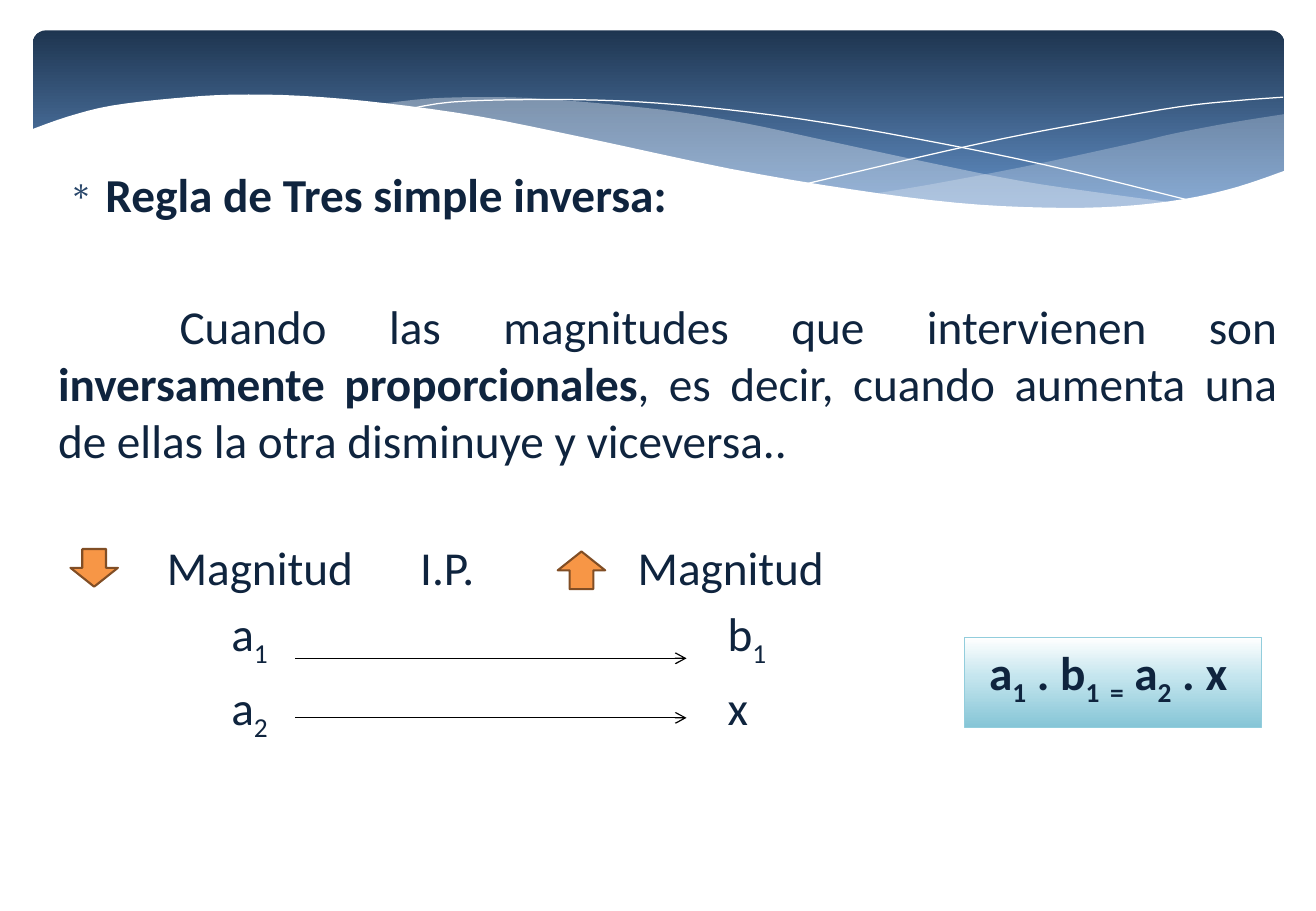
"""Slide on the inverse rule of three, under a wave header."""
from copy import deepcopy
from lxml import etree
from pptx import Presentation
from pptx.dml.color import RGBColor
from pptx.enum.shapes import MSO_CONNECTOR, MSO_SHAPE
from pptx.enum.text import MSO_ANCHOR, PP_ALIGN
from pptx.oxml.ns import qn
from pptx.util import Inches, Pt

RECT, ROUND, DOWN = MSO_SHAPE.RECTANGLE, MSO_SHAPE.ROUNDED_RECTANGLE, MSO_SHAPE.DOWN_ARROW
STRAIGHT = MSO_CONNECTOR.STRAIGHT
LEFT, JUSTIFY, TOP = PP_ALIGN.LEFT, PP_ALIGN.JUSTIFY, MSO_ANCHOR.TOP
THEME = dict(
    font="Calibri", size=Pt(28), text="0F243E", bullet="28466A", white="FFFFFF", mist="E7EDF5",
    arrow="F79646", arrow_edge="814E25", line="000000", formula_edge="92CDDC",
    header=[(0, "1E3550"), (0.9, "608DC3")],
    formula=[(0, "FFFFFF"), (0.44, "C4E5EE"), (1, "85C5D6")])
CELL = Inches(0.1)


def cells(*values):
    """Turn grid cells into slide lengths."""
    return [round(v * CELL) for v in values]


def rgb(name):
    """Look up a theme colour."""
    return RGBColor.from_string(THEME[name])


prs = Presentation()
prs.slide_width, prs.slide_height = cells(108.3, 75)
slide = prs.slides.add_slide(prs.slide_layouts[6])
shapes = slide.shapes

panels = {}
for name, kind, box in [("header", ROUND, (2.7, 2.5, 103, 15.6)),
                        ("formula", RECT, (79.4, 52.5, 24.4, 7.4))]:
    s = panels[name] = shapes.add_shape(kind, *cells(*box))
    s.shadow.inherit = False
    s.fill.gradient()
    s.fill.gradient_angle = 270
    stop_list = s._element.spPr.find(".//" + qn("a:gsLst"))
    for _ in THEME[name][2:]:
        stop_list.append(deepcopy(stop_list[0]))
    for stop, (position, color) in zip(s.fill.gradient_stops, THEME[name]):
        stop.position, stop.color.rgb = position, RGBColor.from_string(color)
panels["header"].adjustments[0] = 0.07
panels["header"].line.fill.background()
panels["formula"].line.color.rgb = rgb("formula_edge")
panels["formula"].line.width = Pt(0.75)

waves = [
    ([[(105.7, 9.4), (101.3, 10.1), (96.6, 11), (93.2, 11.8), (84.4, 13.7), (76.5, 15.2), (71.6, 16)],
      [(71.6, 16), (77.8, 16.7), (83.3, 17.1), (88.2, 17.2), (92.5, 17), (97.2, 16.5), (101.3, 15.6),
       (105.7, 14.2)]], "mist", 29),
    ([[(96.7, 16.7), (90.7, 15.9), (84, 14.9), (76.5, 13.4), (68.1, 11.6), (61.6, 10.2), (55.7, 9.2),
       (50.3, 8.6), (45.5, 8.2), (41.1, 8), (35.5, 8.1), (31, 8.6)],
      [(31, 8.6), (37.1, 9.4), (43.8, 10.6), (48.7, 11.6), (57.4, 13.5), (65.1, 15), (72.1, 16.1),
       (78.3, 16.8), (85, 17.2), (89.7, 17.3), (93.9, 17), (96.7, 16.7)]], "mist", 40),
    ([[(33.5, 9), (37.2, 8.4), (43.5, 8.2), (50.8, 8.3), (57.7, 8.8), (65.9, 9.8), (75.3, 11.4),
       (86.1, 13.6), (98.3, 16.6)]], None, 0),
    ([[(66.5, 15.1), (70.7, 14.1), (78, 12.4), (84.1, 11.1), (90.6, 9.9), (97, 8.8), (101.6, 8.3),
       (105.6, 8)]], None, 0),
    ([[(105.9, 14), (101.8, 15.4), (97.4, 16.4), (92.1, 17), (86, 17.1), (78.7, 16.7), (70.1, 15.6),
       (60.1, 13.9), (48.4, 11.4), (39.5, 9.6), (31.7, 8.5), (24.9, 7.9), (19.1, 7.8), (14.3, 8.1),
       (9.2, 8.7), (5.6, 9.6), (2.5, 10.7)],
      [(2.5, 22.4), (105.9, 22.4)]], "white", 100)]
for curves, color, opacity in waves:
    points = []
    for curve in curves:
        knots = [curve[0], *curve, curve[-1]]
        for a, b, c, d in zip(knots, knots[1:], knots[2:], knots[3:]):
            for t in (0, 0.25, 0.5, 0.75):
                points.append(cells(*(
                    (2 * q + (r - p) * t + (2 * p - 5 * q + 4 * r - s) * t ** 2
                     + (3 * q - p - 3 * r + s) * t ** 3) / 2 for p, q, r, s in zip(a, b, c, d))))
        points.append(cells(*curve[-1]))
    builder = shapes.build_freeform(*points[0])
    builder.add_line_segments(points[1:], close=color is not None)
    s = builder.convert_to_shape()
    s.shadow.inherit = False
    if color:
        s.fill.solid()
        s.fill.fore_color.rgb = rgb(color)
        s.line.fill.background()
        tint = s._element.spPr.find(".//" + qn("a:srgbClr"))
        etree.SubElement(tint, qn("a:alpha"), val=str(opacity * 1000))
    else:
        s.fill.background()
        s.line.color.rgb = rgb("white")
        s.line.width = Pt(0)

for left, top, turn in [(5.8, 45.2, 0), (45.9, 45.4, 180)]:
    s = shapes.add_shape(DOWN, *cells(left, top, 3.9, 3.1))
    s.shadow.inherit = False
    s.rotation = turn
    s.fill.solid()
    s.fill.fore_color.rgb = rgb("arrow")
    s.line.color.rgb = rgb("arrow_edge")
    s.line.width = Pt(1.25)

for y in (54.2, 59.1):
    s = shapes.add_connector(STRAIGHT, *cells(24.3, y, 56.5, y))
    s.line.color.rgb = rgb("line")
    s.line.width = Pt(0.75)
    etree.SubElement(s.line._get_or_add_ln(), qn("a:tailEnd"), type="arrow")
    etree.SubElement(s._element.spPr, qn("a:effectLst"))

rule = shapes.add_textbox(*cells(3.8, 13.1, 102.3, 29.1))
first, relation, second = [shapes.add_textbox(*cells(left, 43.8, width, height))
                           for left, width, height in [(12.75, 18, 18.9), (33.6, 8, 5.8),
                                                       (51.5, 18, 18.9)]]
panels["formula"].text_frame.margin_left = cells(2)[0]
texts = [
    (rule, LEFT, 0, (3.9, -3), [("Regla de Tres simple inversa:", "b")]),
    (rule, JUSTIFY, 45, (0, 10), [
        ("Cuando las magnitudes que intervienen son ", ""), ("inversamente proporcionales", "b"),
        (", es decir, cuando aumenta una de ellas la otra disminuye y viceversa..", "")]),
    (first, LEFT, 0, (0, 0), [("Magnitud", "")]),
    (first, LEFT, 5.6, (5.3, 0), [("a", ""), ("1", "sub")]),
    (first, LEFT, 5.6, (5.3, 0), [("a", ""), ("2", "sub")]),
    (relation, LEFT, 0, (0, 0), [("I.P.", "")]),
    (second, LEFT, 0, (0, 0), [("Magnitud", "")]),
    (second, LEFT, 5.6, (7.4, 0), [("b", ""), ("1", "sub")]),
    (second, LEFT, 5.6, (7.4, 0), [("x", "")]),
    (panels["formula"], LEFT, 0, (0, 0), [
        ("a", "b"), ("1", "b sub"), (" . b", "b"), ("1", "b sub"), (" ", "b"), ("=", "b sub"),
        (" a", "b"), ("2", "b sub"), (" . x", "b")])]
for s, align, before, (margin, indent), runs in texts:
    tf = s.text_frame
    tf.word_wrap = True
    tf.vertical_anchor = TOP
    p = tf.add_paragraph() if tf.text else tf.paragraphs[0]
    p.alignment = align
    p.space_before = Pt(before)
    pPr = p._p.get_or_add_pPr()
    pPr.set("marL", str(cells(margin)[0]))
    pPr.set("indent", str(cells(indent)[0]))
    if indent < 0:
        tint = etree.SubElement(pPr, qn("a:buClr"))
        etree.SubElement(tint, qn("a:srgbClr"), val=THEME["bullet"])
        etree.SubElement(pPr, qn("a:buSzPct"), val="70000")
        etree.SubElement(pPr, qn("a:buChar"), char="∗")
    for text, style in runs:
        r = p.add_run()
        r.text = text
        r.font.name, r.font.size = THEME["font"], THEME["size"]
        r.font.color.rgb = rgb("text")
        r.font.bold = style.startswith("b")
        if style.endswith("sub"):
            r._r.get_or_add_rPr().set("baseline", "-25000")

prs.save("out.pptx")
